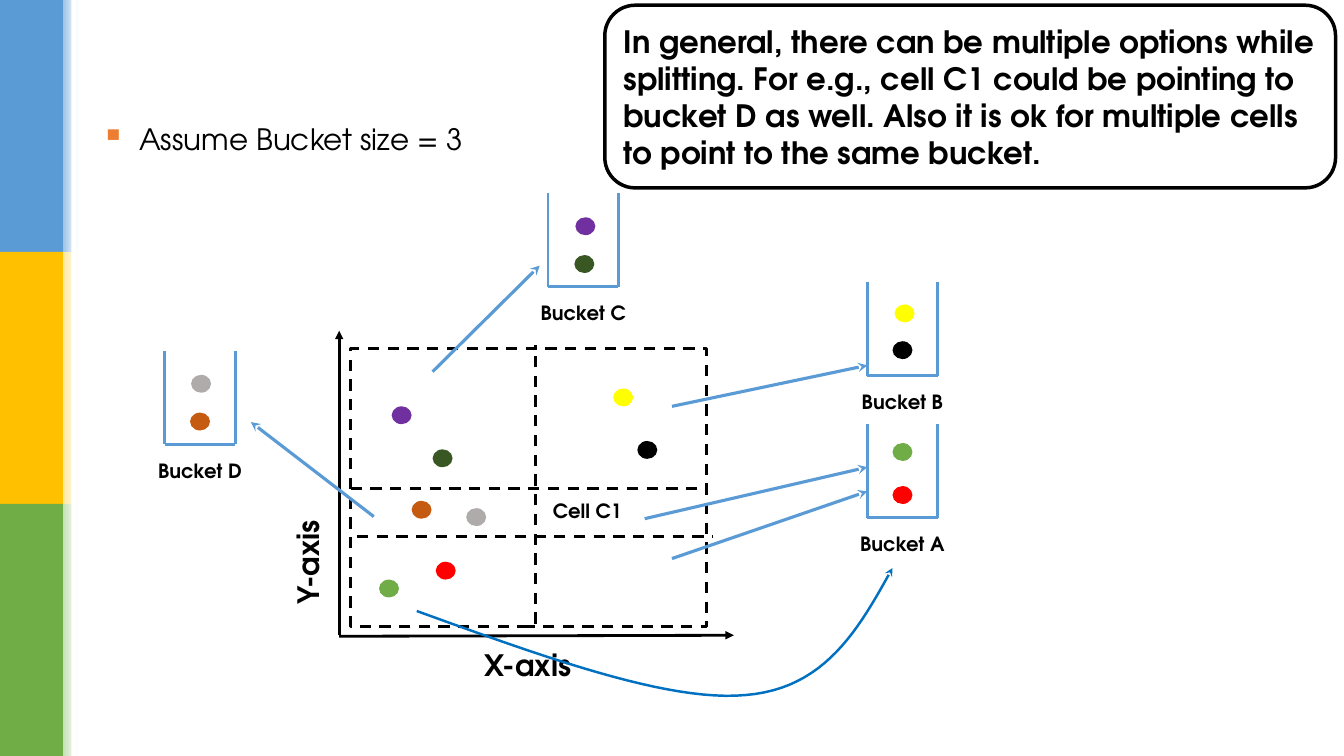
from lxml import etree
from pptx import Presentation
from pptx.dml.color import RGBColor
from pptx.enum.dml import MSO_LINE
from pptx.enum.shapes import MSO_CONNECTOR, MSO_SHAPE
from pptx.enum.text import MSO_ANCHOR, PP_ALIGN
from pptx.oxml.ns import qn
from pptx.util import Pt

RECT, ROUND, OVAL = MSO_SHAPE.RECTANGLE, MSO_SHAPE.ROUNDED_RECTANGLE, MSO_SHAPE.OVAL
STRAIGHT, DASH = MSO_CONNECTOR.STRAIGHT, MSO_LINE.DASH
LEFT, CENTER = PP_ALIGN.LEFT, PP_ALIGN.CENTER
TOP, MIDDLE = MSO_ANCHOR.TOP, MSO_ANCHOR.MIDDLE
PX = 9525

theme = {
    "font": "TeX Gyre Adventor",
    "label": 14, "axis": 21, "body": 21, "note": 22,
    "black": "000000", "white": "FFFFFF", "blue": "5B9BD5", "curve": "0070C0",
    "gold": "FFC000", "green": "70AD47", "orange": "ED7D31",
    "pale blue": "9DC3E6", "pale gold": "FFE699", "pale green": "C5E0B4",
    "red": "FF0000", "yellow": "FFFF00", "purple": "7030A0",
    "forest": "385723", "rust": "C55A11", "gray": "AFABAB",
}
rgb = {name: RGBColor.from_string(value) for name, value in theme.items()
       if isinstance(value, str) and name != "font"}

deck = Presentation()
deck.slide_width, deck.slide_height = 1280 * PX, 720 * PX
slide = deck.slides.add_slide(deck.slide_layouts[6])
shapes = slide.shapes


def write(words, box=None, shape=None, size="label", bold=True,
          align=LEFT, anchor=TOP, turn=0):
    if shape is None:
        shape = shapes.add_textbox(*[n * PX for n in box])
    shape.rotation = turn
    frame = shape.text_frame
    frame.word_wrap = True
    frame.vertical_anchor = anchor
    para = frame.paragraphs[0]
    para.alignment = align
    run = para.add_run()
    run.text = words
    run.font.name = theme["font"]
    run.font.size = Pt(theme[size])
    run.font.bold = bold
    run.font.color.rgb = rgb["black"]
    return para


def stroke(shape, color, width, dash=None, head=None):
    line = shape.line
    line.color.rgb = rgb[color]
    line.width = Pt(width)
    if dash:
        line.dash_style = dash
    props = shape.element.spPr
    if head:
        etree.SubElement(props.find(qn("a:ln")), qn("a:tailEnd"), type=head)
    etree.SubElement(props, qn("a:effectLst"))


for row, color in enumerate(["blue", "gold", "green"]):
    top = row * 240 * PX
    band = shapes.add_shape(RECT, 0, top, 60 * PX, 240 * PX)
    band.fill.solid()
    band.fill.fore_color.rgb = rgb[color]
    fade = shapes.add_shape(RECT, 60 * PX, top, 15 * PX, 240 * PX)
    fade.fill.gradient()
    fade.fill.gradient_angle = 0
    for stop, tint in zip(fade.fill.gradient_stops, ["pale " + color, "white"]):
        stop.color.rgb = rgb[tint]
    for part in (band, fade):
        part.line.fill.background()
        part.shadow.inherit = False

strip = shapes.add_shape(RECT, 68 * PX, 0, 5 * PX, 720 * PX)
strip.fill.solid()
strip.fill.fore_color.rgb = rgb["white"]
strip.line.fill.background()
strip.shadow.inherit = False

para = write("Assume Bucket size = 3", (87, 94, 383, 60), size="body", bold=False)
para.line_spacing = 1.5
para.space_after = Pt(6)
props = para._p.get_or_add_pPr()
props.set("marL", str(36 * PX))
props.set("indent", str(-36 * PX))
tint = etree.SubElement(props, qn("a:buClr"))
etree.SubElement(tint, qn("a:srgbClr"), val=theme["orange"])
etree.SubElement(props, qn("a:buSzPct"), val="112000")
etree.SubElement(props, qn("a:buChar"), char="▪")

grid = shapes.add_shape(RECT, 334 * PX, 332 * PX, 339 * PX, 265 * PX)
grid.fill.background()
stroke(grid, "black", 2, DASH)

buckets = [
    ("A", 826, 404, [("green", 24, 18, 361, 552), ("red", 24, 59, 415, 535)]),
    ("B", 826, 269, [("yellow", 26, 21, 584, 370), ("black", 24, 56, 607, 420)]),
    ("C", 522, 184, [("purple", 26, 23, 373, 387), ("forest", 25, 59, 412, 428)]),
    ("D", 157, 334, [("gray", 25, 23, 444, 484), ("rust", 24, 59, 392, 477)]),
]
axis = ("black", 2, None, "triangle")
split = ("black", 2, DASH, None)
wall = ("blue", 2, None, None)
arrow = ("blue", 2.25, None, "stealth")
lines = [
    (323, 606, 699, 605, axis),
    (323, 605, 323, 315, axis),
    (334, 465, 673, 465, split),
    (340, 511, 679, 511, split),
    (510, 594, 510, 329, split),
    (640, 532, 826, 468, arrow),
    (614, 494, 826, 445, arrow),
    (640, 387, 826, 348, arrow),
    (412, 354, 514, 253, arrow),
    (356, 492, 239, 402, arrow),
]
dots = []
for name, left, top, points in buckets:
    right, base = left + 67, top + 89
    lines += [(left, top, left, base, wall), (left, base, right, base, wall),
              (right, top, right, base, wall)]
    write("Bucket " + name, (left - 21, top + 96, 109, 36),
          align=CENTER, anchor=MIDDLE)
    for color, dx, dy, x, y in points:
        dots += [(color, left + dx, top + dy), (color, x, y)]

for x1, y1, x2, y2, style in lines:
    link = shapes.add_connector(STRAIGHT, x1 * PX, y1 * PX, x2 * PX, y2 * PX)
    stroke(link, *style)

for color, x, y in dots:
    dot = shapes.add_shape(OVAL, x * PX, y * PX, 19 * PX, 17 * PX)
    dot.fill.solid()
    dot.fill.fore_color.rgb = rgb[color]
    dot.line.fill.background()
    dot.shadow.inherit = False

write("X-axis", (452, 612, 116, 43), size="axis")
write("Y-axis", (235, 506, 116, 43), size="axis", turn=270)
write("Cell C1", (505, 468, 109, 36), align=CENTER, anchor=MIDDLE)

bends = [
    [(397, 582), (516, 625), (636, 669), (710, 662)],
    [(710, 662), (786, 656), (818, 599), (850, 541)],
]
trail = []
for bend in bends:
    for step in range(1, 25):
        t = step / 24
        parts = [(1 - t) ** 3, 3 * t * (1 - t) ** 2, 3 * t * t * (1 - t), t ** 3]
        trail.append([sum(k * p[i] for k, p in zip(parts, bend)) * PX for i in (0, 1)])
pen = shapes.build_freeform(397 * PX, 582 * PX)
pen.add_line_segments(trail, close=False)
curve = pen.convert_to_shape()
curve.fill.background()
stroke(curve, "curve", 1.75, head="stealth")

note = shapes.add_shape(ROUND, 576 * PX, 5 * PX, 696 * PX, 174 * PX)
note.fill.background()
stroke(note, "black", 2.5)
write("In general, there can be multiple options while splitting. For e.g., "
      "cell C1 could be pointing to bucket D as well. Also it is ok for "
      "multiple cells to point to the same bucket.",
      shape=note, size="note", anchor=MIDDLE)

deck.save("out.pptx")
